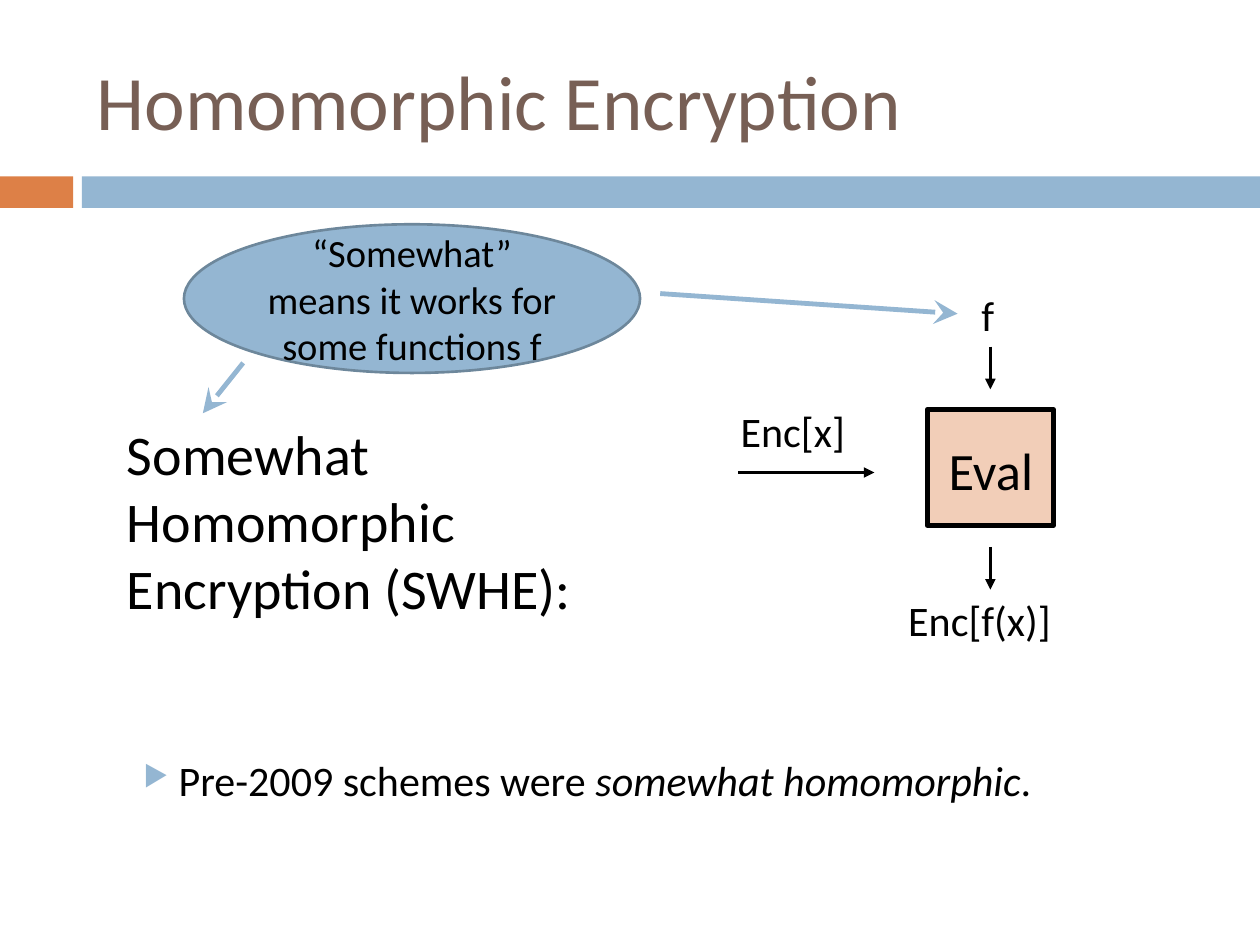
from dataclasses import dataclass

from lxml import etree
from pptx import Presentation
from pptx.dml.color import RGBColor
from pptx.enum.shapes import MSO_CONNECTOR, MSO_SHAPE
from pptx.enum.text import MSO_ANCHOR, PP_ALIGN
from pptx.oxml.ns import qn
from pptx.util import Inches, Pt

RECTANGLE, ELLIPSE = MSO_SHAPE.RECTANGLE, MSO_SHAPE.OVAL
STRAIGHT = MSO_CONNECTOR.STRAIGHT
TOP, MIDDLE = MSO_ANCHOR.TOP, MSO_ANCHOR.MIDDLE
LEFT, CENTER = PP_ALIGN.LEFT, PP_ALIGN.CENTER

COLUMNS, ROWS = 100, 75
WIDTH, HEIGHT = Inches(10), Inches(7.5)


@dataclass(frozen=True)
class Theme:
    font: str = "Calibri"
    title: str = "775F55"
    ink: str = "000000"
    orange: str = "DD8047"
    blue: str = "94B6D2"
    blue_edge: str = "6D879B"
    peach: str = "EBB391"
    title_size: int = 44
    heading_size: int = 32
    eval_size: int = 30
    label_size: int = 24
    callout_size: int = 22


THEME = Theme()


def across(columns):
    return round(WIDTH * columns / COLUMNS)


def down(rows):
    return round(HEIGHT * rows / ROWS)


def place(left, top, width, height):
    return across(left), down(top), across(width), down(height)


def add_child(parent, tag, **attributes):
    return etree.SubElement(parent, qn(tag), attributes)


def style_text(frame, size, color=THEME.ink, anchor=MIDDLE, align=LEFT):
    frame.word_wrap = True
    frame.vertical_anchor = anchor
    for para in frame.paragraphs:
        para.alignment = align
        for span in para.runs:
            span.font.name = THEME.font
            span.font.size = Pt(size)
            span.font.color.rgb = RGBColor.from_string(color)


def add_text(page, area, text, size, **style):
    box = page.shapes.add_textbox(*place(*area))
    box.text_frame.text = text
    style_text(box.text_frame, size, **style)
    return box


def add_panel(page, kind, area, fill, edge=None, weight=0):
    panel = page.shapes.add_shape(kind, *place(*area))
    panel.shadow.inherit = False
    panel.fill.solid()
    panel.fill.fore_color.rgb = RGBColor.from_string(fill)
    if edge:
        panel.line.color.rgb = RGBColor.from_string(edge)
        panel.line.width = Pt(weight)
    else:
        panel.line.fill.background()
    return panel


def set_opacity(panel, percent):
    color = panel.fill._xPr.find(qn("a:solidFill"))[0]
    add_child(color, "a:alpha", val=str(percent * 1000))


def add_arrow(page, start, end, color=THEME.ink, weight=2, head="triangle", head_size="med"):
    arrow = page.shapes.add_connector(
        STRAIGHT, across(start[0]), down(start[1]), across(end[0]), down(end[1]))
    arrow.line.color.rgb = RGBColor.from_string(color)
    arrow.line.width = Pt(weight)
    add_child(arrow.line._ln, "a:tailEnd", type=head, w=head_size, len=head_size)
    add_child(arrow._element.spPr, "a:effectLst")


def add_bullet(para, symbol, color, percent):
    para.space_before = Pt(4)
    properties = para._p.get_or_add_pPr()
    properties.set("marL", str(Inches(0.4)))
    properties.set("indent", str(Inches(-0.28)))
    bullet_color = add_child(properties, "a:buClr")
    add_child(bullet_color, "a:srgbClr", val=color)
    add_child(properties, "a:buSzPct", val=str(percent * 1000))
    add_child(properties, "a:buChar", char=symbol)


def add_header(page):
    add_panel(page, RECTANGLE, (0, 14, 5.8, 2.5), THEME.orange)
    add_panel(page, RECTANGLE, (6.5, 14, 93.5, 2.5), THEME.blue)
    add_text(page, (6.7, 2.5, 89.2, 10.8), "Homomorphic Encryption",
             THEME.title_size, color=THEME.title)


def add_callout(page):
    callout = add_panel(page, ELLIPSE, (14.6, 17.8, 36.2, 11.8),
                        THEME.blue, THEME.blue_edge, 1.5)
    callout.text_frame.text = "“Somewhat” means it works for some functions f"
    style_text(callout.text_frame, THEME.callout_size, align=CENTER)
    for start, end in (((19.3, 28.8), (16.1, 32.8)), ((52.4, 23.3), (76, 24.9))):
        add_arrow(page, start, end, THEME.blue, 2.75, "stealth", "lg")


def add_evaluation(page):
    """Draw the Eval box with its two inputs and its output."""
    axis, side, top, height = 78.6, 10, 32.5, 9.2
    evaluator = add_panel(page, RECTANGLE, (axis - side / 2, top, side, height),
                          THEME.peach, THEME.ink, 3)
    set_opacity(evaluator, 64)
    add_text(page, (74.3, 33.9, 9.2, 6.7), "Eval", THEME.eval_size)
    for arrow_top in (27.5, 43.4):
        add_arrow(page, (axis, arrow_top), (axis, arrow_top + 3.4))
    add_arrow(page, (58.6, 37.5), (69.4, 37.5))
    labels = (("f", 76.9, 22.5, 5), ("Enc[x]", 57.8, 31.7, 13.9),
              ("Enc[f(x)]", 71.1, 46.7, 17.5))
    for text, left, label_top, width in labels:
        add_text(page, (left, label_top, width, 5), text, THEME.label_size)


def add_remark(page):
    box = page.shapes.add_textbox(*place(9.2, 59.4, 75.8, 10.6))
    para = box.text_frame.paragraphs[0]
    for text, italic in (("Pre-2009 schemes were ", False),
                         ("somewhat homomorphic", True), (".", False)):
        span = para.add_run()
        span.text = text
        span.font.italic = italic
    style_text(box.text_frame, THEME.label_size, anchor=TOP)
    add_bullet(para, "▶", THEME.blue, 68)


def main():
    deck = Presentation()
    deck.slide_width, deck.slide_height = WIDTH, HEIGHT
    page = deck.slides.add_slide(deck.slide_layouts[6])
    add_header(page)
    add_text(page, (9.1, 32.8, 50.4, 17.2),
             "Somewhat\nHomomorphic\nEncryption (SWHE):", THEME.heading_size, anchor=TOP)
    add_callout(page)
    add_evaluation(page)
    add_remark(page)
    deck.save("out.pptx")


if __name__ == "__main__":
    main()
